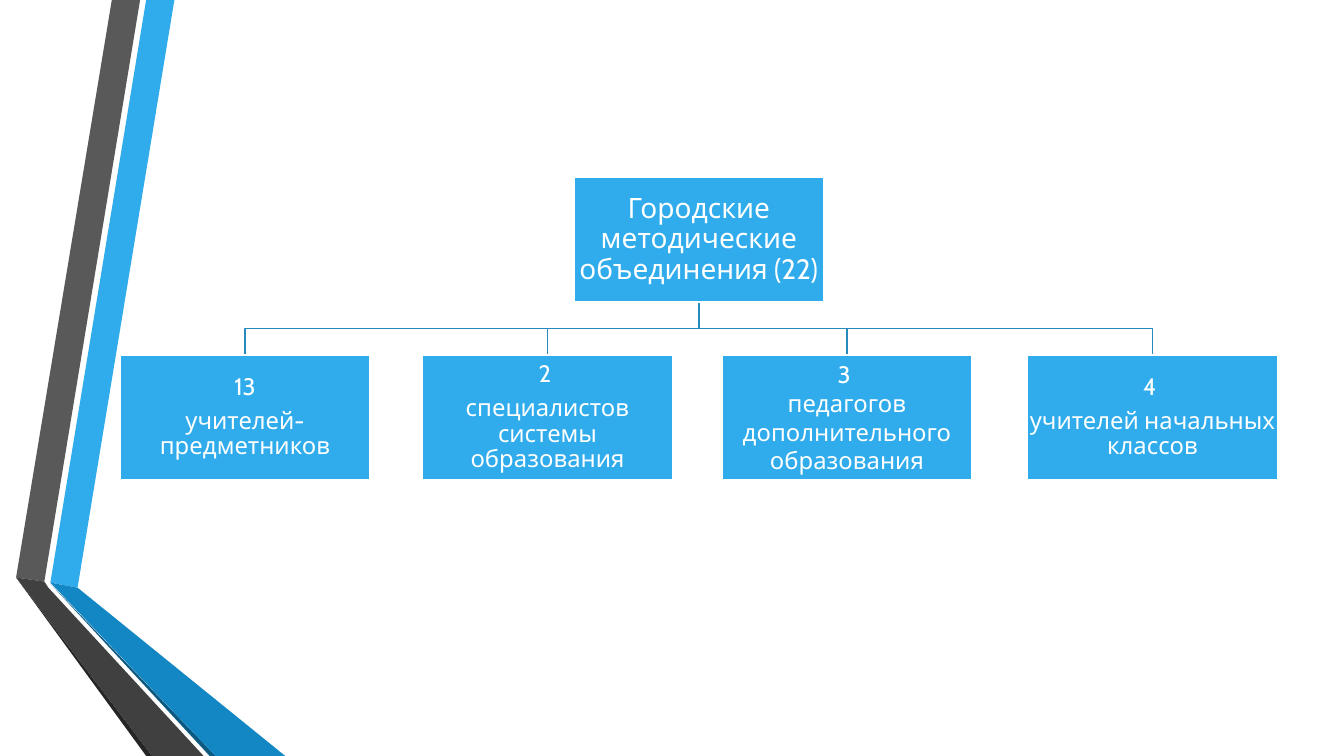
from dataclasses import dataclass

from pptx import Presentation
from pptx import util as u
from pptx.dml import color
from pptx.enum import shapes, text


@dataclass(frozen=True)
class Theme:
    font: str = "Cabin"
    head: int = 20
    body: int = 17
    edge: float = 1.25
    white: str = "FFFFFF"
    blue: str = "30ACEC"
    deep: str = "1287C3"
    navy: str = "0C5A82"
    grey: str = "595959"
    dark: str = "404040"
    black: str = "262626"
    link: str = "268ABD"


theme = Theme()
WIDE, HIGH = 13.33, 7.5
CARD_W, CARD_H = 2.48, 1.24

# Ribbon facets, from back to front
FACETS = [
    (theme.blue, [(0.5, 5.78), (0.77, 5.83), (1.73, 0), (1.45, 0)]),
    (theme.grey, [(1.39, 0), (1.11, 0), (0.16, 5.73), (0.44, 5.77)]),
    (theme.black, [(0.16, 5.73), (1.45, 7.5), (1.51, 7.5)]),
    (theme.navy, [(0.5, 5.79), (2.08, 7.5), (2.14, 7.5)]),
    (theme.deep, [(0.5, 5.78), (2.14, 7.5), (2.83, 7.5), (0.77, 5.83)]),
    (theme.dark, [(2.02, 7.5), (0.48, 5.83), (0.44, 5.77), (0.16, 5.73),
                  (1.51, 7.5)]),
]

# Left edge, line spacing, space after, paragraphs
GROUPS = [
    (0, 0.9, 6, ["13", "учителей-предметников"]),
    (3, 0.9, 6, ["2 ", "специалистов системы образования"]),
    (5.97, 1, 0, ["3 ", "педагогов дополнительного образования"]),
    (9, 0.9, 6, ["4 ", "учителей начальных классов"]),
]


def rgb(code):
    return color.RGBColor.from_string(code)


def outline(slide, points, closed):
    spots = [(u.Inches(x), u.Inches(y)) for x, y in points]
    pen = slide.shapes.build_freeform(*spots[0])
    pen.add_line_segments(spots[1:], close=closed)
    shape = pen.convert_to_shape()
    shape.shadow.inherit = False
    return shape


def ribbon(slide, left, top):
    for tint, points in FACETS:
        shape = outline(slide, [(left + x, top + y) for x, y in points], True)
        shape.fill.solid()
        shape.fill.fore_color.rgb = rgb(tint)
        shape.line.fill.background()


def branch(slide, start, end):
    (x, y), (goal, base) = start, end
    mid = (y + base) / 2
    shape = outline(slide, [(x, y), (x, mid), (goal, mid), (goal, base)], False)
    shape.fill.background()
    shape.line.color.rgb = rgb(theme.link)
    shape.line.width = u.Pt(theme.edge)


def card(slide, left, top, lines, size, pitch=0.9, after=6):
    shape = slide.shapes.add_shape(
        shapes.MSO_SHAPE.RECTANGLE, u.Inches(left), u.Inches(top),
        u.Inches(CARD_W), u.Inches(CARD_H))
    shape.shadow.inherit = False
    shape.fill.solid()
    shape.fill.fore_color.rgb = rgb(theme.blue)
    shape.line.color.rgb = rgb(theme.white)
    shape.line.width = u.Pt(theme.edge)

    frame = shape.text_frame
    frame.word_wrap = True
    frame.vertical_anchor = text.MSO_ANCHOR.MIDDLE
    frame.margin_left = frame.margin_right = u.Inches(0.01)
    frame.margin_top = frame.margin_bottom = u.Inches(0.01)
    for i, line in enumerate(lines):
        para = frame.paragraphs[0] if i == 0 else frame.add_paragraph()
        para.alignment = text.PP_ALIGN.CENTER
        para.line_spacing = pitch
        para.space_after = u.Pt(after)
        run = para.add_run()
        run.text = line
        run.font.name = theme.font
        run.font.size = u.Pt(size)
        run.font.color.rgb = rgb(theme.white)


def chart(slide, left, top, width, height):
    mid = left + width / 2
    base = top + height - CARD_H
    # Branches lie behind the cards
    for x, *_ in reversed(GROUPS):
        branch(slide, (mid, top + CARD_H), (left + x + CARD_W / 2, base))
    # Root card, then one card for each group
    card(slide, mid - CARD_W / 2, top,
         ["Городские методические объединения (22)"], theme.head)
    for x, pitch, after, lines in GROUPS:
        card(slide, left + x, base, lines, theme.body, pitch, after)


def main():
    deck = Presentation()
    deck.slide_width, deck.slide_height = u.Inches(WIDE), u.Inches(HIGH)
    slide = deck.slides.add_slide(deck.slide_layouts[6])
    ribbon(slide, 0, 0)
    chart(slide, 1.19, 1.76, 11.48, 3)
    deck.save("out.pptx")


if __name__ == "__main__":
    main()
